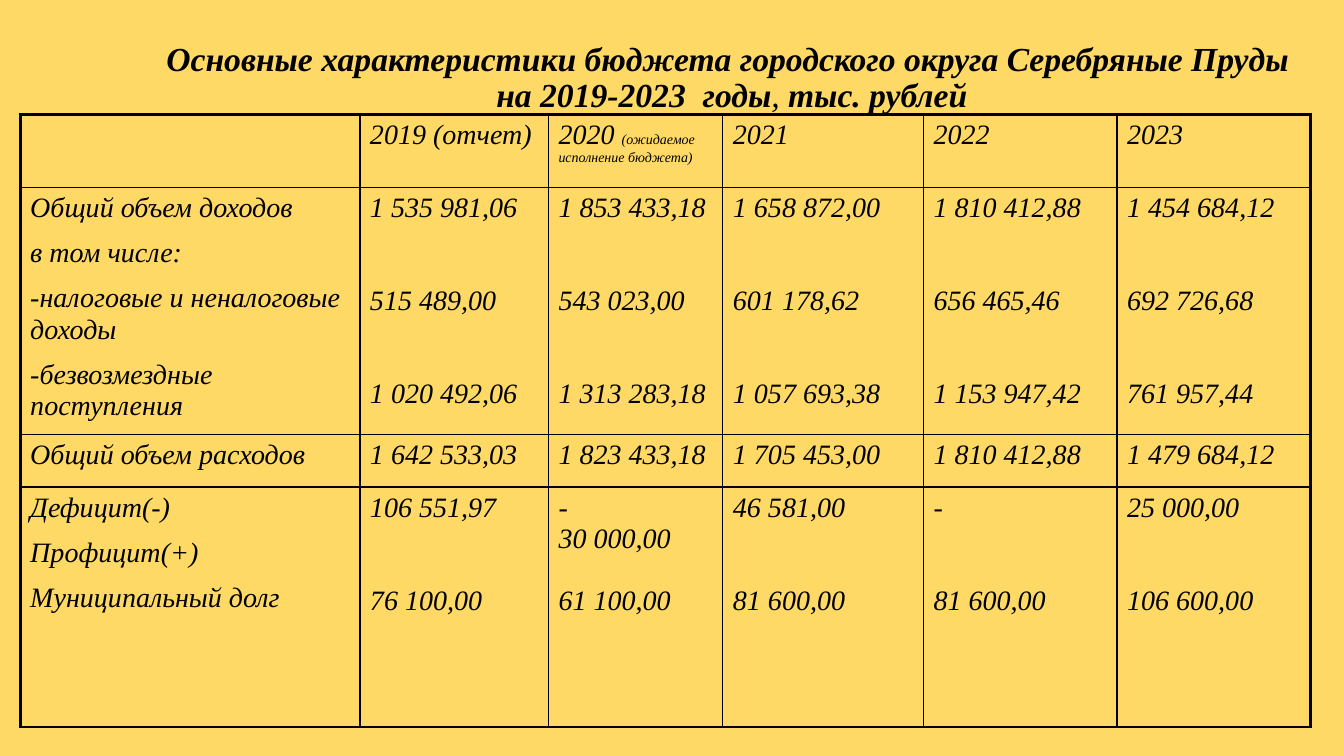
from lxml.etree import SubElement as Sub
from pptx import Presentation
from pptx.dml.color import RGBColor
from pptx.enum.text import MSO_ANCHOR as Anchor, PP_ALIGN as Align
from pptx.oxml.ns import qn
from pptx.util import Inches, Pt

BLACK = RGBColor(0, 0, 0)
GOLD = RGBColor(0xFF, 0xD9, 0x66)
FONT = "Times New Roman"
WIDE, HIGH = Inches(13.33), Inches(7.5)
COLS = [3.37, 1.87, 1.73, 1.99, 1.92, 1.92]
ROWS = [0.73, 2.45, 0.52, 2.38]
THIN, THICK = Pt(1), Pt(2.25)
LINE = 22.14

YEARS = ["2019 (отчет)", "2020 ", "2021", "2022", "2023"]
NOTE = "(ожидаемое исполнение бюджета)"
LABELS = [
    ["Общий объем доходов", "в том числе:",
     "-налоговые и неналоговые доходы", "-безвозмездные поступления"],
    ["Общий объем расходов"],
    ["Дефицит(-)", "Профицит(+)", "Муниципальный долг"],
]
SUMS = [
    [["1 535 981,06", "515 489,00", "1 020 492,06"],
     ["1 853 433,18", "543 023,00", "1 313 283,18"],
     ["1 658 872,00", "601 178,62", "1 057 693,38"],
     ["1 810 412,88", "656 465,46", "1 153 947,42"],
     ["1 454 684,12", "692 726,68", "761 957,44"]],
    [["1 642 533,03"], ["1 823 433,18"], ["1 705 453,00"],
     ["1 810 412,88"], ["1 479 684,12"]],
    [["106 551,97", "76 100,00"], ["-", "30 000,00", "61 100,00"],
     ["46 581,00", "81 600,00"], ["-", "81 600,00"],
     ["25 000,00", "106 600,00"]],
]


def style(run, size, bold=False):
    font = run.font
    font.name, font.size = FONT, Pt(size)
    font.bold, font.italic = bold, True
    font.color.rgb = BLACK


def add_run(para, text, size, bold=False):
    run = para.add_run()
    run.text = text
    style(run, size, bold)


def add_title(slide):
    box = slide.shapes.add_textbox(
        int(WIDE * 0.089), int(HIGH * 0.039), int(WIDE * 0.911), int(HIGH * 0.129))
    frame = box.text_frame
    frame.word_wrap = True
    frame.vertical_anchor = Anchor.MIDDLE
    para = frame.paragraphs[0]
    para.text = ("Основные характеристики бюджета городского округа "
                 "Серебряные Пруды \vна 2019-2023  годы")
    para.alignment = Align.CENTER
    para.line_spacing = 0.9
    for run in para.runs:
        style(run, 24, True)
    add_run(para, ", ", 24)
    add_run(para, "тыс. рублей", 24, True)


def set_edges(cell, row, col):
    edges = {"L": col == 0, "R": col == len(COLS) - 1,
             "T": row == 0, "B": row == len(ROWS) - 1}
    props = cell._tc.get_or_add_tcPr()
    for side, outer in edges.items():
        line = Sub(props, qn(f"a:ln{side}"), w=str(THICK if outer else THIN))
        fill = Sub(line, qn("a:solidFill"))
        Sub(fill, qn("a:srgbClr"), val=str(BLACK))
    cell.fill.background()


def fill_cell(cell, texts, gaps):
    cell.text_frame.text = "\n".join(texts)
    for para, gap in zip(cell.text_frame.paragraphs, gaps):
        para.alignment = Align.LEFT
        para.space_before = Pt(gap)
        for run in para.runs:
            style(run, 20)


def sum_gaps(texts):
    if texts[0] == "-" and len(texts) == 3:
        return [0, 0, LINE]
    return [0] + [2 * LINE] * (len(texts) - 1)


def add_grid(slide):
    frame = slide.shapes.add_table(
        len(ROWS), len(COLS), int(WIDE * 0.015), int(HIGH * 0.151),
        Inches(sum(COLS)), Inches(sum(ROWS)))
    table = frame.table
    table.first_row = table.horz_banding = False
    for col, width in zip(table.columns, COLS):
        col.width = Inches(width)
    for row, height in zip(table.rows, ROWS):
        row.height = Inches(height)
    for row in range(len(ROWS)):
        for col in range(len(COLS)):
            set_edges(table.cell(row, col), row, col)
    for col, year in enumerate(YEARS, 1):
        fill_cell(table.cell(0, col), [year], [10])
    add_run(table.cell(0, 2).text_frame.paragraphs[0], NOTE, 10)
    for row, (names, sums) in enumerate(zip(LABELS, SUMS), 1):
        fill_cell(table.cell(row, 0), names, [10] * len(names))
        for col, texts in enumerate(sums, 1):
            fill_cell(table.cell(row, col), texts, sum_gaps(texts))


def main():
    deck = Presentation()
    deck.slide_width, deck.slide_height = WIDE, HIGH
    slide = deck.slides.add_slide(deck.slide_layouts[6])
    back = slide.background.fill
    back.solid()
    back.fore_color.rgb = GOLD
    add_grid(slide)
    add_title(slide)
    deck.save("out.pptx")


if __name__ == "__main__":
    main()
